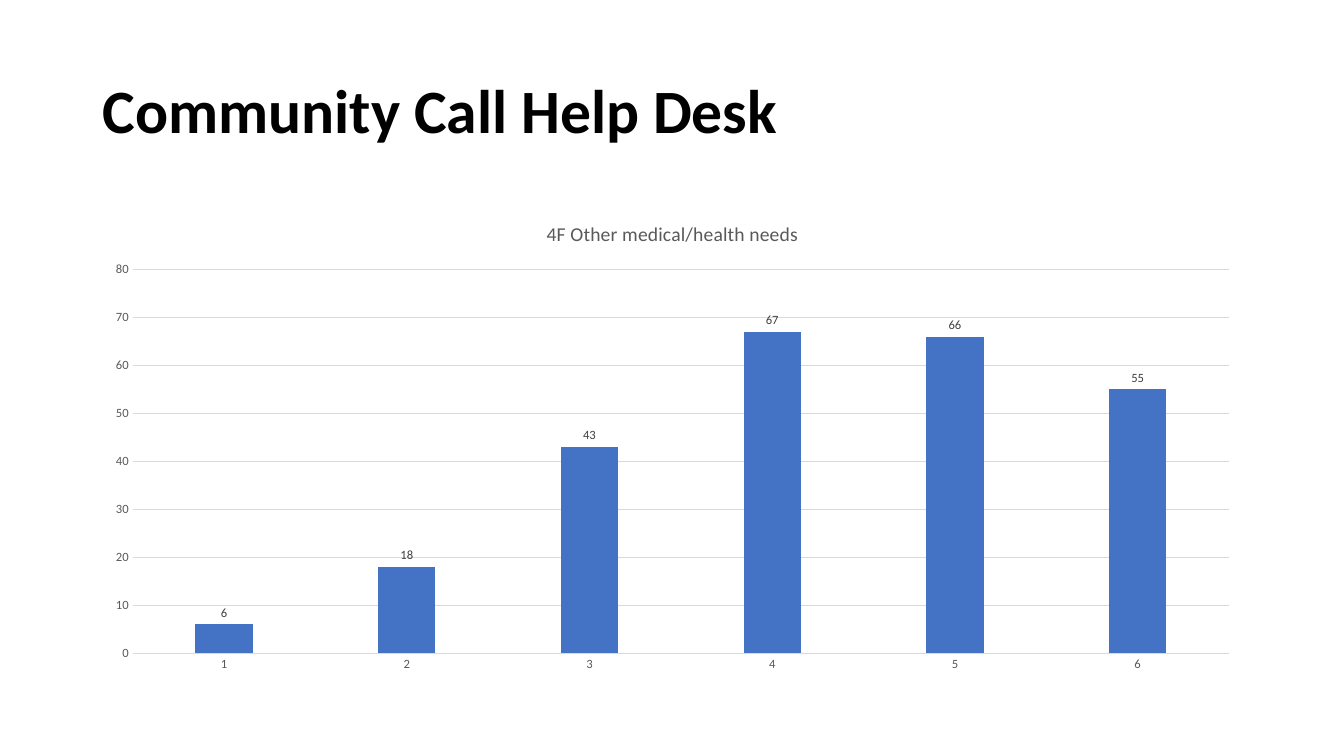
import pptx
import pptx.chart.data
import pptx.dml.color
import pptx.enum.chart
import pptx.enum.text
import pptx.util
from pptx.util import Inches

FONT = "Calibri"
GREY = "595959"
RULE = "D9D9D9"
CHART_TITLE = "4F Other medical/health needs"
CALLS = {"1": 6, "2": 18, "3": 43, "4": 67, "5": 66, "6": 55}


def rgb(value):
    return pptx.dml.color.RGBColor.from_string(value)


def style_font(font, size, color, bold=False):
    font.name = FONT
    font.size = pptx.util.Pt(size)
    font.bold = bold
    font.color.rgb = rgb(color)


def write_text(tf, text, *, size, color, bold=False, align=None, spacing=None):
    p = tf.paragraphs[0]
    p.alignment = align
    p.line_spacing = spacing
    r = p.add_run()
    r.text = text
    style_font(r.font, size, color, bold)


def style_line(line):
    line.color.rgb = rgb(RULE)
    line.width = pptx.util.Pt(0.75)


def style_axis(axis):
    axis.major_tick_mark = pptx.enum.chart.XL_TICK_MARK.NONE
    axis.minor_tick_mark = pptx.enum.chart.XL_TICK_MARK.NONE
    style_font(axis.tick_labels.font, 9, GREY)


def add_title(slide, text):
    sp = slide.shapes.title
    sp.left, sp.top = Inches(0.92), Inches(0.4)
    sp.width, sp.height = Inches(11.5), Inches(1.45)
    tf = sp.text_frame
    tf.word_wrap = True
    tf.vertical_anchor = pptx.enum.text.MSO_ANCHOR.MIDDLE
    write_text(tf, text, size=44, color="000000", bold=True,
               align=pptx.enum.text.PP_ALIGN.LEFT, spacing=0.9)


def add_column_chart(slide, title, values):
    data = pptx.chart.data.CategoryChartData()
    data.categories = list(values)
    data.add_series(title, list(values.values()))
    chart = slide.shapes.add_chart(
        pptx.enum.chart.XL_CHART_TYPE.COLUMN_CLUSTERED,
        Inches(0.92), Inches(2), Inches(11.5), Inches(4.76), data).chart
    style_font(chart.font, 10, "000000")
    chart.has_legend = False
    chart.has_title = True
    write_text(chart.chart_title.text_frame, title, size=14, color=GREY)
    chart.chart_title.include_in_layout = False

    style_axis(chart.category_axis)
    style_line(chart.category_axis.format.line)
    style_axis(chart.value_axis)
    chart.value_axis.format.line.fill.background()
    chart.value_axis.has_major_gridlines = True
    style_line(chart.value_axis.major_gridlines.format.line)

    plot = chart.plots[0]
    plot.vary_by_categories = False
    plot.gap_width = 219
    plot.overlap = -27
    series = plot.series[0]
    series.format.fill.solid()
    series.format.fill.fore_color.rgb = rgb("4472C4")
    labels = series.data_labels
    labels.show_value = True
    labels.position = pptx.enum.chart.XL_LABEL_POSITION.OUTSIDE_END
    style_font(labels.font, 9, "404040")


def main():
    prs = pptx.Presentation()
    prs.slide_width, prs.slide_height = Inches(13.33), Inches(7.5)
    slide = prs.slides.add_slide(prs.slide_layouts.get_by_name("Title Only"))
    add_title(slide, "Community Call Help Desk")
    add_column_chart(slide, CHART_TITLE, CALLS)
    prs.save("out.pptx")


if __name__ == "__main__":
    main()
